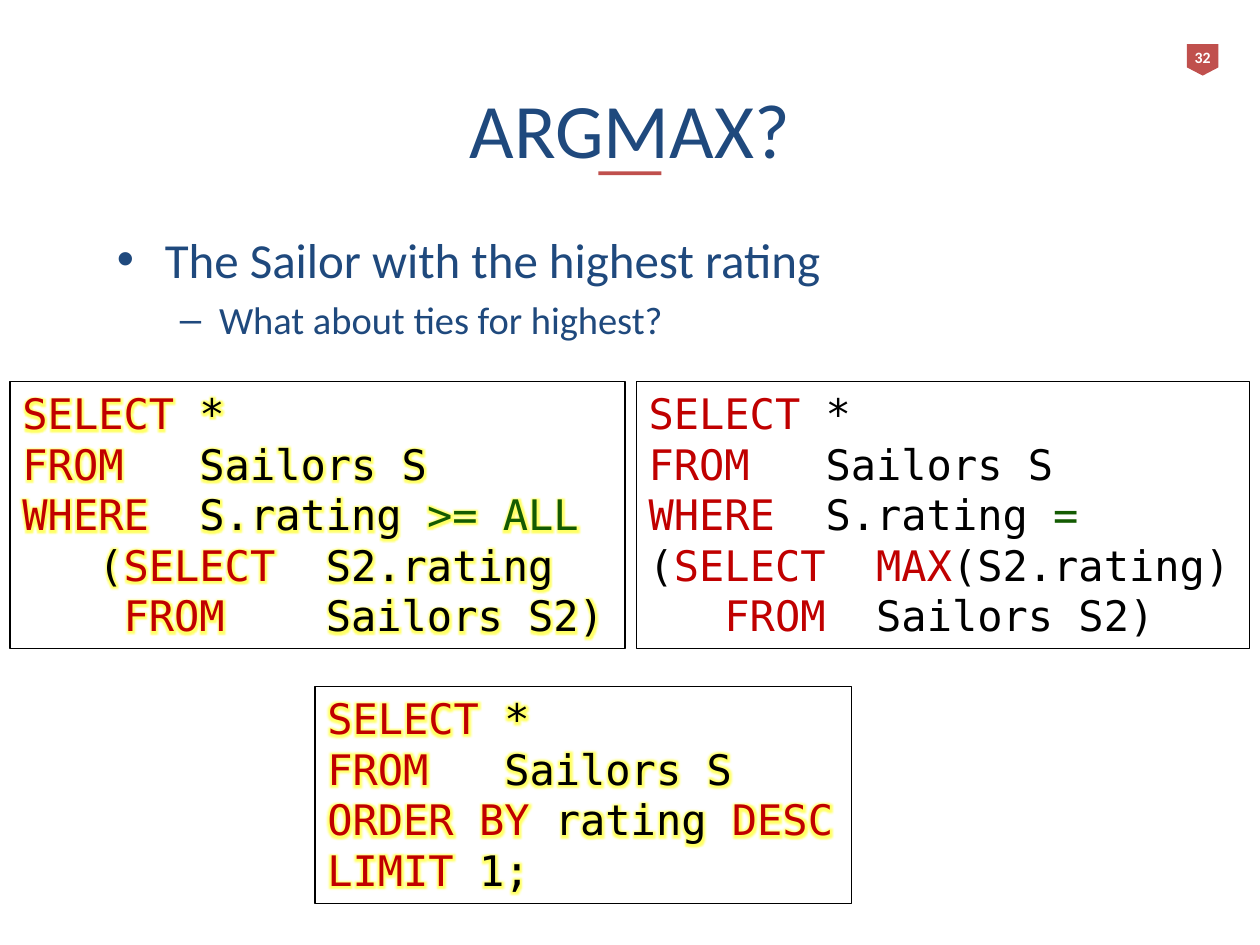
from lxml.etree import SubElement
from pptx import Presentation
from pptx.dml.color import RGBColor
from pptx.enum.shapes import MSO_SHAPE as Shape
from pptx.enum.text import MSO_ANCHOR as Anchor, PP_ALIGN as Align
from pptx.oxml.ns import qn
from pptx.util import Inches, Pt

COLORS = {"navy": "1F497D", "accent": "C0504D", "white": "FFFFFF", "glow": "FFFF00",
          "keyword": "C00000", "plain": "000000", "operator": "135B02"}
BODY_FONT, CODE_FONT = "Calibri", "DejaVu Sans Mono"

# Content
TITLE = "ARGMAX?"
PAGE_NUMBER = "32"
# text, level, size, bullet, left margin, hanging indent
BULLETS = [
    ("The Sailor with the highest rating", 0, 28, "•", 0.38, 0.38),
    ("What about ties for highest?", 1, 22, "–", 0.81, 0.31),
]
K, P, O = "keyword", "plain", "operator"
# position and size, glow, lines of (text, colour)
QUERIES = [
    ((0.08, 3.03, 4.88, 2.12), True, [
        [("SELECT", K), (" *", P)],
        [("FROM", K), ("   Sailors S", P)],
        [("WHERE  ", K), ("S.rating ", P), (">= ALL", O)],
        [("   (", P), ("SELECT", K), ("  S2.rating", P)],
        [("    FROM  ", K), ("  Sailors S2)", P)],
    ]),
    ((5.05, 3.03, 4.87, 2.12), False, [
        [("SELECT", K), (" *", P)],
        [("FROM   ", K), ("Sailors S", P)],
        [("WHERE  ", K), ("S.rating ", P), ("=", O)],
        [("(", P), ("SELECT  MAX", K), ("(S2.rating)", P)],
        [("   FROM  ", K), ("Sailors S2)", P)],
    ]),
    ((2.5, 5.45, 4.26, 1.72), True, [
        [("SELECT ", K), ("*", P)],
        [("FROM", K), ("   Sailors S", P)],
        [("ORDER BY", K), (" rating ", P), ("DESC", K)],
        [("LIMIT ", K), ("1;", P)],
    ]),
]


def rgb(name):
    return RGBColor.from_string(COLORS[name])


def add_run(para, text, size, color, font=BODY_FONT, bold=None):
    span = para.add_run()
    span.text = text
    span.font.size, span.font.name, span.font.bold = Pt(size), font, bold
    span.font.color.rgb = rgb(color)
    return span


def add_glow(span):
    fill = span.font._element.find(qn("a:solidFill"))
    effects = SubElement(span.font._element, qn("a:effectLst"))
    fill.addnext(effects)
    glow = SubElement(effects, qn("a:glow"), rad=str(Pt(8)))
    tone = SubElement(glow, qn("a:srgbClr"), val=COLORS["glow"])
    SubElement(tone, qn("a:alpha"), val="60000")


def add_block(page, kind, place, fill=None):
    block = page.shapes.add_shape(kind, *map(Inches, place))
    block.shadow.inherit = False
    if fill:
        block.fill.solid()
        block.fill.fore_color.rgb = rgb(fill)
    else:
        block.fill.background()
    block.line.fill.background()
    return block


def add_query(page, place, glowing, lines):
    box = add_block(page, Shape.RECTANGLE, place)
    box.line.color.rgb = rgb("plain")
    box.line.width = Pt(0.75)
    frame = box.text_frame
    frame.word_wrap = False
    frame.vertical_anchor = Anchor.TOP
    for index, line in enumerate(lines):
        para = frame.add_paragraph() if index else frame.paragraphs[0]
        para.alignment = Align.LEFT
        for text, color in line:
            span = add_run(para, text, 24, color, CODE_FONT)
            if glowing:
                add_glow(span)


def add_bullets(page):
    frame = page.shapes.add_textbox(*map(Inches, (0.83, 1.77, 8.35, 4.81))).text_frame
    frame.word_wrap = True
    for index, (text, level, size, mark, margin, hang) in enumerate(BULLETS):
        para = frame.add_paragraph() if index else frame.paragraphs[0]
        para.level = level
        para.space_before = Pt(size * 0.2)
        props = para._p.get_or_add_pPr()
        props.set("marL", str(Inches(margin)))
        props.set("indent", str(-Inches(hang)))
        SubElement(props, qn("a:buFont"), typeface="Arial")
        SubElement(props, qn("a:buChar"), char=mark)
        add_run(para, text, size, "navy")


def main():
    deck = Presentation()
    deck.slide_width, deck.slide_height = Inches(10), Inches(7.5)
    page = deck.slides.add_slide(deck.slide_layouts[5])

    # Page number tag
    tag = add_block(page, Shape.PENTAGON, (9.42, 0.35, 0.25, 0.25), "accent")
    tag.adjustments[0] = 0.26
    tag.rotation = 90
    number = page.shapes.add_textbox(*map(Inches, (9.38, 0.33, 0.33, 0.25))).text_frame
    number.word_wrap = False
    number.paragraphs[0].alignment = Align.CENTER
    add_run(number.paragraphs[0], PAGE_NUMBER, 9, "white", bold=True)

    # Title and its underline
    title = page.shapes.title
    title.left, title.top, title.width, title.height = map(Inches, (0.5, 0.73, 9, 0.57))
    title.text_frame.vertical_anchor = Anchor.MIDDLE
    title.text_frame.paragraphs[0].alignment = Align.CENTER
    add_run(title.text_frame.paragraphs[0], TITLE, 44, "navy")
    add_block(page, Shape.RECTANGLE, (4.75, 1.36, 0.5, 0.03), "accent")

    # Bullets and queries
    add_bullets(page)
    for place, glowing, lines in QUERIES:
        add_query(page, place, glowing, lines)

    deck.save("out.pptx")


if __name__ == "__main__":
    main()
